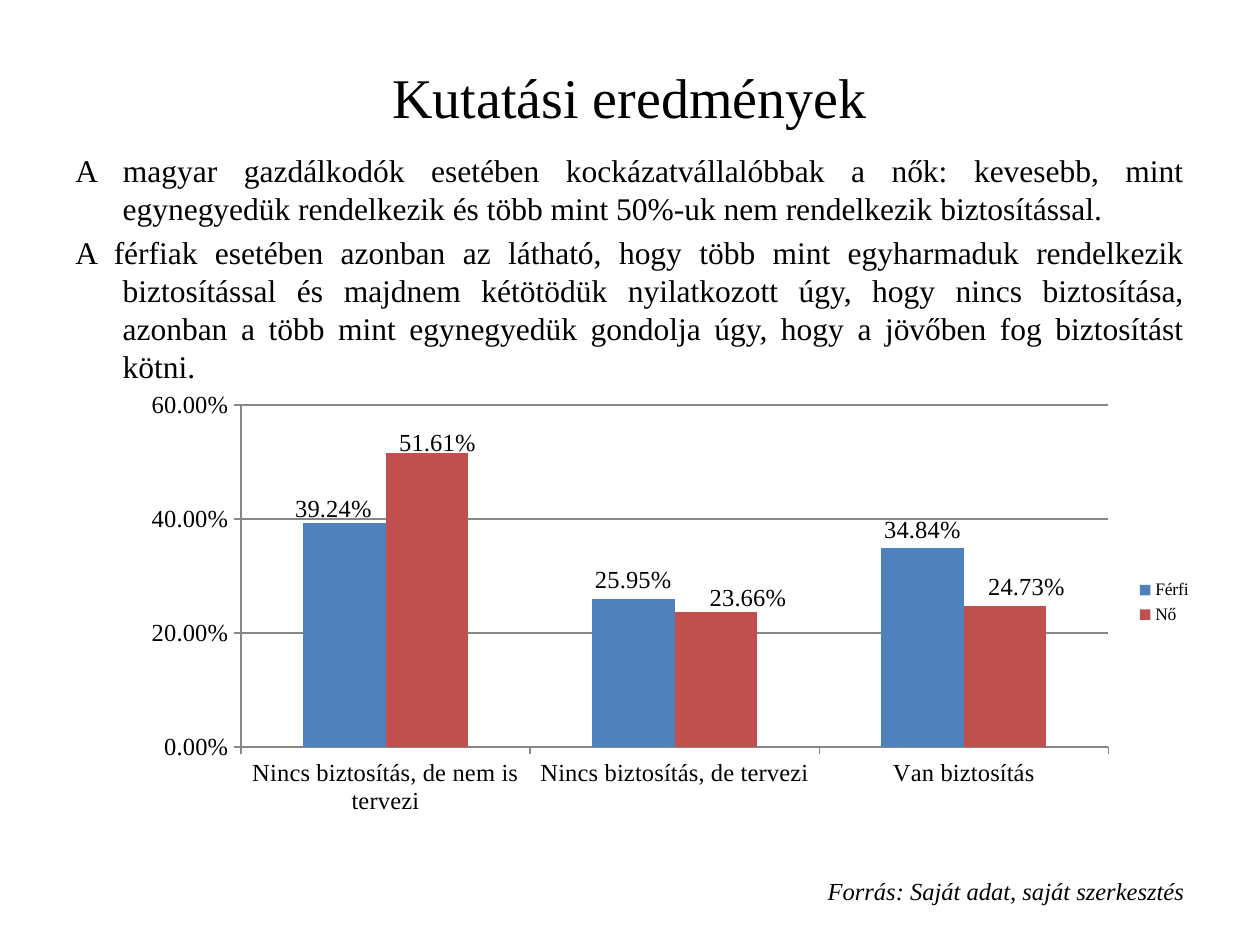
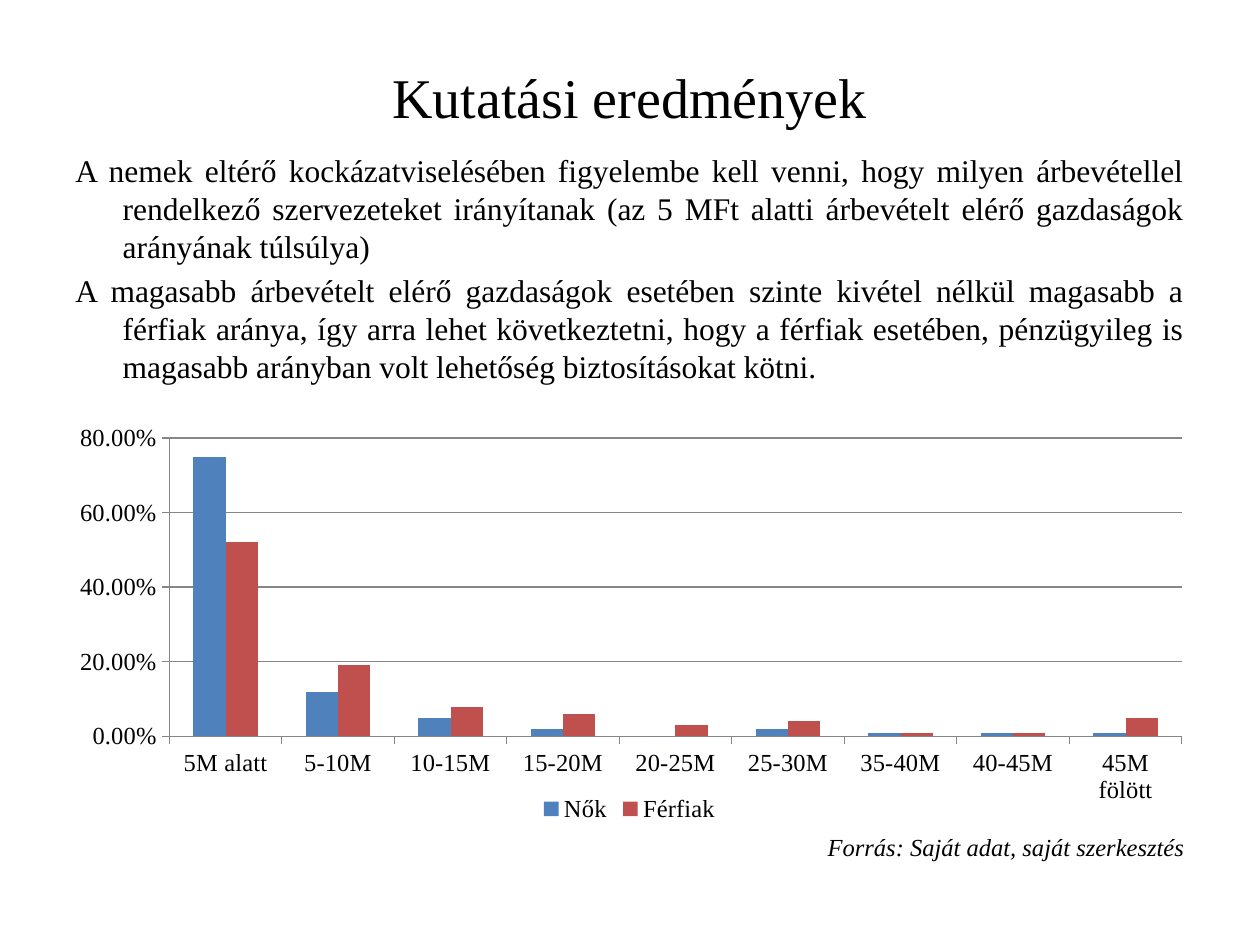
"""Build two slides of survey results, each with a title, text, column chart and source line."""
from lxml import etree
from pptx import Presentation
from pptx.chart.data import CategoryChartData
from pptx.dml.color import RGBColor
from pptx.enum.chart import XL_CHART_TYPE, XL_LABEL_POSITION, XL_LEGEND_POSITION, XL_TICK_MARK
from pptx.enum.text import MSO_ANCHOR, PP_ALIGN
from pptx.oxml.ns import qn
from pptx.util import Pt

COLUMNS = XL_CHART_TYPE.COLUMN_CLUSTERED
OUTSIDE_END = XL_LABEL_POSITION.OUTSIDE_END
RIGHT, BOTTOM = XL_LEGEND_POSITION.RIGHT, XL_LEGEND_POSITION.BOTTOM
TICK_OUT = XL_TICK_MARK.OUTSIDE
TOP, MIDDLE = MSO_ANCHOR.TOP, MSO_ANCHOR.MIDDLE
LEFT_AL, CENTER_AL = PP_ALIGN.LEFT, PP_ALIGN.CENTER
RIGHT_AL, JUSTIFY_AL = PP_ALIGN.RIGHT, PP_ALIGN.JUSTIFY

FONT = "Times New Roman"
BLACK, GRAY = "000000", "868686"
SERIES_COLORS = ["4F81BD", "C0504D"]
PERCENT = "0.00%"
MARGIN, TEXT_WIDTH = 36, 648
TITLE = "Kutatási eredmények"
SOURCE = "Forrás: Saját adat, saját szerkesztés"

SLIDES = [
    dict(
        paragraphs=[
            "A magyar gazdálkodók esetében kockázatvállalóbbak a nők: kevesebb, mint "
            "egynegyedük rendelkezik és több mint 50%-uk nem rendelkezik biztosítással.",
            "A férfiak esetében azonban az látható, hogy több mint egyharmaduk rendelkezik "
            "biztosítással és majdnem kétötödük nyilatkozott úgy, hogy nincs biztosítása, "
            "azonban a több mint egynegyedük gondolja úgy, hogy a jövőben fog biztosítást kötni.",
        ],
        box=(76.5, 219, 612, 250.5), plot=(0.1, 0.05, 0.81, 0.78),
        categories=["Nincs biztosítás, de nem is tervezi",
                    "Nincs biztosítás, de tervezi", "Van biztosítás"],
        series={"Férfi": [0.3924, 0.2595, 0.3484], "Nő": [0.5161, 0.2366, 0.2473]},
        label_shifts=[{0: (-0.01, 0.01)}, {0: (0.01, 0.02), 1: (0.03, 0.01), 2: (0.02, 0)}],
        maximum=0.6, legend=RIGHT, legend_size=10, source_top=497,
    ),
    dict(
        paragraphs=[
            "A nemek eltérő kockázatviselésében figyelembe kell venni, hogy milyen árbevétellel "
            "rendelkező szervezeteket irányítanak (az 5 MFt alatti árbevételt elérő gazdaságok "
            "arányának túlsúlya)",
            "A magasabb árbevételt elérő gazdaságok esetében szinte kivétel nélkül magasabb a "
            "férfiak aránya, így arra lehet következtetni, hogy a férfiak esetében, pénzügyileg is "
            "magasabb arányban volt lehetőség biztosításokat kötni.",
        ],
        box=(31, 236, 657.5, 237), plot=(0.1, 0.06, 0.88, 0.72),
        categories=["5M alatt", "5-10M", "10-15M", "15-20M", "20-25M",
                    "25-30M", "35-40M", "40-45M", "45M fölött"],
        series={"Nők": [0.75, 0.12, 0.05, 0.02, 0, 0.02, 0.01, 0.01, 0.01],
                "Férfiak": [0.52, 0.19, 0.08, 0.06, 0.03, 0.04, 0.01, 0.01, 0.05]},
        label_shifts=[],
        maximum=0.8, legend=BOTTOM, legend_size=14, source_top=472,
    ),
]


def add_text(slide, paragraphs, top, height, size, align=LEFT_AL, anchor=TOP,
             italic=False, hanging=0, before=0):
    sp = slide.shapes.add_textbox(Pt(MARGIN), Pt(top), Pt(TEXT_WIDTH), Pt(height))
    tf = sp.text_frame
    tf.word_wrap = True
    tf.vertical_anchor = anchor
    for i, text in enumerate(paragraphs):
        p = tf.add_paragraph() if i else tf.paragraphs[0]
        p.alignment = align
        p.space_before = Pt(before)
        pPr = p._p.get_or_add_pPr()
        pPr.set("marL", str(Pt(hanging)))
        pPr.set("indent", str(-Pt(hanging)))
        r = p.add_run()
        r.text = text
        r.font.name = FONT
        r.font.size = Pt(size)
        r.font.italic = italic
        r.font.color.rgb = RGBColor.from_string(BLACK)


def set_layout(parent, position, **values):
    for old in parent.findall(qn("c:layout")):
        parent.remove(old)
    layout = etree.Element(qn("c:layout"))
    manual = etree.SubElement(layout, qn("c:manualLayout"))
    for tag, value in values.items():
        etree.SubElement(manual, qn("c:" + tag)).set("val", str(value))
    parent.insert(position, layout)


prs = Presentation()
prs.slide_width, prs.slide_height = Pt(720), Pt(540)

for content in SLIDES:
    s = prs.slides.add_slide(prs.slide_layouts[6])
    add_text(s, [TITLE], 21.5, 67, 32, align=CENTER_AL, anchor=MIDDLE)
    add_text(s, content["paragraphs"], 83, 140, 18, align=JUSTIFY_AL, hanging=27, before=3.6)

    data = CategoryChartData(number_format=PERCENT)
    data.categories = content["categories"]
    for name, values in content["series"].items():
        data.add_series(name, values)
    chart = s.shapes.add_chart(COLUMNS, *map(Pt, content["box"]), data).chart
    chart.has_title = False
    chart.font.name = FONT
    chart.font.size = Pt(10)
    chart.font.color.rgb = RGBColor.from_string(BLACK)
    chart.has_legend = True
    chart.legend.position = content["legend"]
    chart.legend.include_in_layout = False
    chart.legend.font.size = Pt(content["legend_size"])

    for axis in (chart.category_axis, chart.value_axis):
        axis.tick_labels.font.size = Pt(14)
        axis.major_tick_mark = TICK_OUT
        axis.format.line.color.rgb = RGBColor.from_string(GRAY)
        axis.format.line.width = Pt(0.75)
    axis = chart.value_axis
    axis.minimum_scale, axis.maximum_scale = 0, content["maximum"]
    axis.major_unit = 0.2
    axis.tick_labels.number_format = PERCENT
    axis.tick_labels.number_format_is_linked = False
    axis.major_gridlines.format.line.color.rgb = RGBColor.from_string(GRAY)
    axis.major_gridlines.format.line.width = Pt(0.75)

    plot = chart.plots[0]
    plot.vary_by_categories = False
    plot.gap_width, plot.overlap = 150, 0
    for series, color in zip(plot.series, SERIES_COLORS):
        series.invert_if_negative = False
        series.format.fill.solid()
        series.format.fill.fore_color.rgb = RGBColor.from_string(color)

    for series, shifts in zip(plot.series, content["label_shifts"]):
        labels = series.data_labels
        labels.show_value = True
        labels.position = OUTSIDE_END
        labels.number_format = PERCENT
        labels.number_format_is_linked = False
        labels.font.size = Pt(14)
        for i in shifts:
            label = series.points[i].data_label
            label.font.size = Pt(14)
            label.position = OUTSIDE_END
        for dLbl in series._element.iter(qn("c:dLbl")):
            dx, dy = shifts[int(dLbl.find(qn("c:idx")).get("val"))]
            set_layout(dLbl, 1, x=dx, y=dy)

    x, y, w, h = content["plot"]
    set_layout(chart._chartSpace.find(".//" + qn("c:plotArea")), 0, layoutTarget="inner",
               xMode="edge", yMode="edge", x=x, y=y, w=w, h=h)

    add_text(s, [SOURCE], content["source_top"], 24, 14, align=RIGHT_AL, italic=True)

prs.save("out.pptx")
